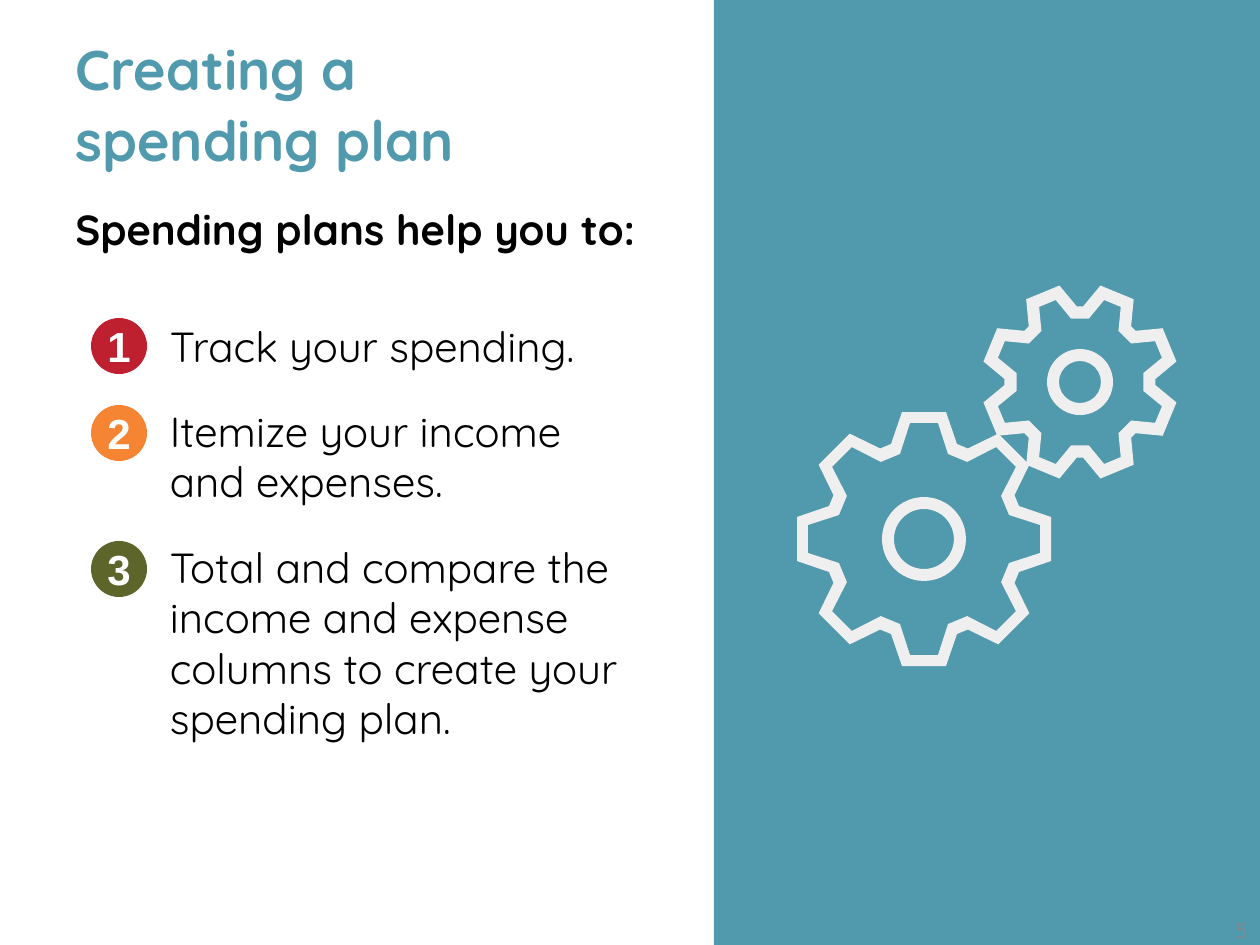
"""Build the slide on creating a spending plan, with numbered steps and two gears."""
from math import cos, pi, sin

from pptx import Presentation
from pptx.dml.color import RGBColor
from pptx.enum.shapes import MSO_SHAPE
from pptx.enum.text import MSO_ANCHOR, PP_ALIGN
from pptx.util import Pt

PX = 7257.6
OVAL, RECTANGLE, DONUT = MSO_SHAPE.OVAL, MSO_SHAPE.RECTANGLE, MSO_SHAPE.DONUT
TOP, MIDDLE, BOTTOM = MSO_ANCHOR.TOP, MSO_ANCHOR.MIDDLE, MSO_ANCHOR.BOTTOM
LEFT, CENTER, RIGHT = PP_ALIGN.LEFT, PP_ALIGN.CENTER, PP_ALIGN.RIGHT
TEAL = RGBColor(0x51, 0x99, 0xAD)
RED = RGBColor(0xBF, 0x20, 0x2F)
ORANGE = RGBColor(0xF5, 0x84, 0x33)
OLIVE = RGBColor(0x5E, 0x65, 0x2B)
PALE = RGBColor(0xEF, 0xEF, 0xEF)
GRAY = RGBColor(0x89, 0x89, 0x89)
BLACK = RGBColor(0, 0, 0)
WHITE = RGBColor(0xFF, 0xFF, 0xFF)
TEETH = 8


def emu(*lengths):
    return [round(length * PX) for length in lengths]


def write(shape, anchor, paragraphs):
    frame = shape.text_frame
    frame.word_wrap = True
    frame.vertical_anchor = anchor
    for index, (text, font, layout) in enumerate(paragraphs):
        para = frame.add_paragraph() if index else frame.paragraphs[0]
        para.text = text
        for name, value in layout.items():
            setattr(para, name, value)
        for span in para.runs:
            span.font.color.rgb = font["color"]
            for name in ("name", "size", "bold"):
                setattr(span.font, name, font[name])
    return frame


deck = Presentation()
deck.slide_width, deck.slide_height = emu(1260, 945)
page = deck.slides.add_slide(deck.slide_layouts[6])
shapes = page.shapes

title_font = {"name": "Quicksand", "size": Pt(32), "bold": True, "color": TEAL}
lead_font = {"name": "Quicksand", "size": Pt(24), "bold": True, "color": BLACK}
step_font = {**lead_font, "bold": False}
badge_font = {"name": "Arial", "size": Pt(24), "bold": True, "color": WHITE}
number_font = {"name": "Quicksand", "size": Pt(12), "bold": False, "color": GRAY}

title = shapes.add_textbox(*emu(63, 53, 525, 126))
write(title, BOTTOM, [("Creating a spending plan", title_font, {"line_spacing": 1.05})])

steps = [
    ("Track your spending.", RED, 318),
    ("Itemize your income\vand expenses.", ORANGE, 405),
    ("Total and compare the income and expense columns to create your spending plan.", OLIVE, 541),
]
lead_layout = {"space_before": Pt(8), "space_after": Pt(30)}
step_layout = {"space_before": Pt(8), "space_after": Pt(12)}
body = shapes.add_textbox(*emu(63, 197, 630, 696))
frame = write(body, TOP, [("Spending plans help you to:", lead_font, lead_layout)]
              + [(text, step_font, step_layout) for text, color, top in steps])
for para in frame.paragraphs[1:]:
    properties = para._p.get_or_add_pPr()
    properties.set("marL", str(emu(94.5)[0]))
    properties.set("indent", "0")

for number, (text, color, top) in enumerate(steps, 1):
    badge = shapes.add_shape(OVAL, *emu(91, top, 56, 56))
    badge.shadow.inherit = False
    badge.fill.solid()
    badge.fill.fore_color.rgb = color
    badge.line.fill.background()
    frame = write(badge, MIDDLE, [(str(number), badge_font, {"alignment": CENTER})])
    for side in ("left", "top", "right", "bottom"):
        setattr(frame, f"margin_{side}", 0)

panel = shapes.add_shape(RECTANGLE, *emu(714, 0, 546, 945))
panel.shadow.inherit = False
panel.fill.solid()
panel.fill.fore_color.rgb = TEAL
panel.line.fill.background()

gears = [
    (924, 539, 0, 42, [[(33, 95), (22, 127)], [(24, 85), (14, 116)]]),
    (1080, 382, pi / TEETH, 33, [[(26, 71), (18, 97)], [(16, 62), (9, 85)]]),
]
for center_x, center_y, turn, radius, profiles in gears:
    contours = []
    for root, tip in profiles:
        tooth = [(-root[0], root[1]), (-tip[0], tip[1]), tip, root]
        contour = []
        for index in range(TEETH):
            angle = turn + index * 2 * pi / TEETH
            for across, out in tooth:
                contour.append(emu(center_x + across * cos(angle) + out * sin(angle),
                                   center_y + across * sin(angle) - out * cos(angle)))
        contours.append(contour)
    outer, inner = contours
    builder = shapes.build_freeform(*outer[0])
    builder.add_line_segments(outer[1:], close=True)
    builder.move_to(*inner[0])
    builder.add_line_segments(inner[1:], close=True)
    rim = builder.convert_to_shape()
    hub = shapes.add_shape(DONUT, *emu(center_x - radius, center_y - radius, 2 * radius, 2 * radius))
    hub.adjustments[0] = 6 / radius
    for part in (rim, hub):
        part.shadow.inherit = False
        part.fill.solid()
        part.fill.fore_color.rgb = PALE
        part.line.fill.background()

slide_number = shapes.add_textbox(*emu(1134, 909, 126, 42))
write(slide_number, MIDDLE, [("5", number_font, {"alignment": RIGHT})])

deck.save("out.pptx")
